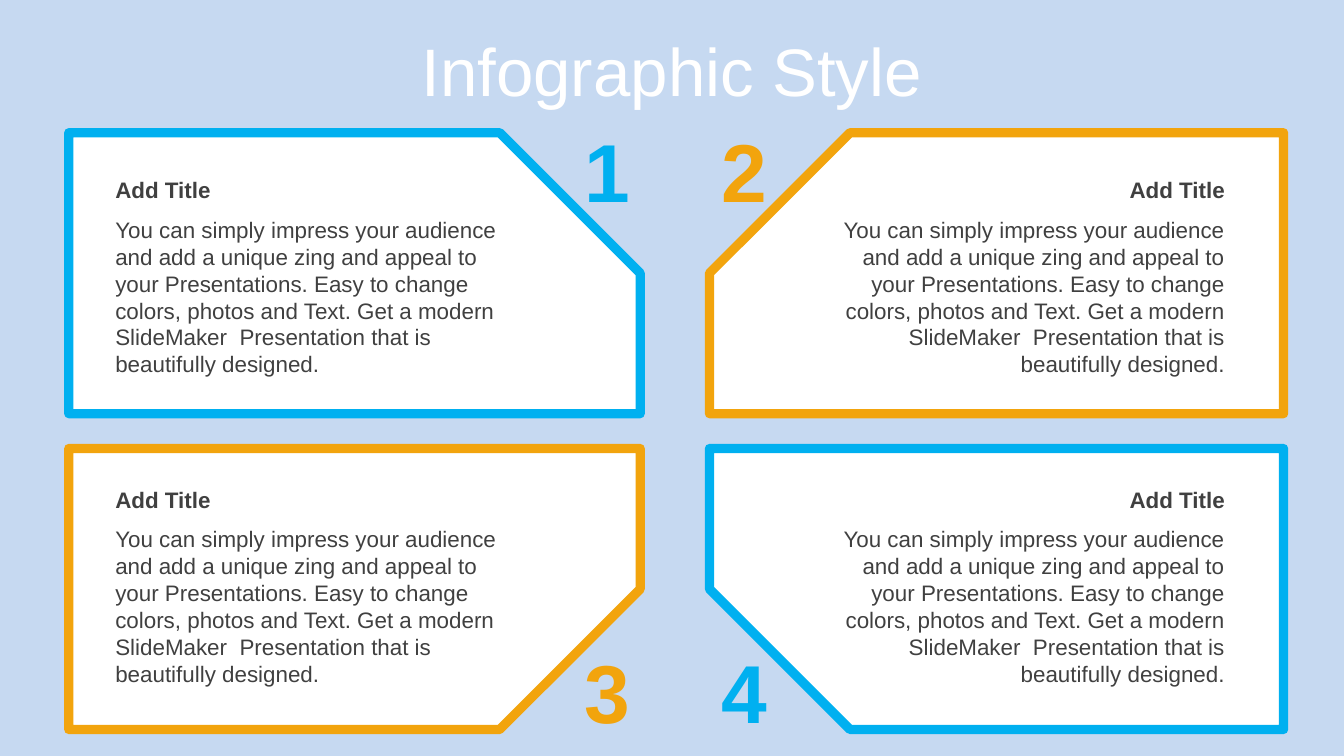
from pptx import Presentation
from pptx.dml.color import RGBColor
from pptx.enum.shapes import MSO_SHAPE as Shape
from pptx.enum.text import MSO_ANCHOR as Anchor, MSO_AUTO_SIZE as AutoSize, PP_ALIGN as Align
from pptx.util import Cm, Pt

BACKDROP, WHITE, BLUE, ORANGE, GREY = "C6D9F1", "FFFFFF", "00B0F0", "F2A40D", "404040"

BODY = ("You can simply impress your audience and add a unique zing and appeal to "
        "your Presentations. Easy to change colors, photos and Text. Get a modern "
        "SlideMaker  Presentation that is beautifully designed.")

# Columns and rows of the two-by-two grid, in centimetres
COLUMNS = [
    dict(card=1.3, width=10.8, number=10.11, text=1.93, align=Align.LEFT),
    dict(card=13.41, width=10.85, number=12.7, text=15.25, align=Align.RIGHT),
]
ROWS = [
    dict(card=2.51, number=2.15, heading=3.2, body=3.96),
    dict(card=8.48, number=11.99, heading=9.06, body=9.81),
]


def color(code):
    return RGBColor.from_string(code)


def add_text(shapes, text, box, size, code, align, bold=False,
             anchor=Anchor.TOP, auto_size=AutoSize.SHAPE_TO_FIT_TEXT):
    frame = shapes.add_textbox(*map(Cm, box)).text_frame
    frame_format = dict(word_wrap=True, auto_size=auto_size, vertical_anchor=anchor)
    for key, value in frame_format.items():
        setattr(frame, key, value)
    paragraph = frame.paragraphs[0]
    paragraph.alignment = align
    run = paragraph.add_run()
    run.text = text
    for key, value in dict(name="Arial", size=Pt(size), bold=bold).items():
        setattr(run.font, key, value)
    run.font.color.rgb = color(code)


def add_card(shapes, column, row, code, flips):
    card = shapes.add_shape(Shape.SNIP_1_RECTANGLE, Cm(column["card"]), Cm(row["card"]),
                            Cm(column["width"]), Cm(5.31))
    card.adjustments[0] = 0.5
    card.shadow.inherit = False
    card.fill.solid()
    card.fill.fore_color.rgb = color(WHITE)
    card.line.color.rgb = color(code)
    card.line.width = Pt(5)
    # Turn the cut corner towards the middle of the slide
    for flip in flips:
        card._element.spPr.xfrm.set(flip, "1")


def add_number(shapes, number, column, row, code):
    add_text(shapes, str(number), (column["number"], row["number"], 2.74, 2.13),
             44, code, Align.CENTER, bold=True, anchor=Anchor.MIDDLE)


def add_copy(shapes, column, row):
    group = shapes.add_group_shape().shapes
    left, align = column["text"], column["align"]
    add_text(group, BODY, (left, row["body"], 8.15, 3.33), 12, GREY, align)
    add_text(group, "Add Title", (left, row["heading"], 8.15, 0.76), 12, GREY, align, bold=True)


def main():
    deck = Presentation()
    deck.slide_width, deck.slide_height = Cm(25.4), Cm(14.29)
    slide = deck.slides.add_slide(deck.slide_layouts[6])
    slide.background.fill.solid()
    slide.background.fill.fore_color.rgb = color(BACKDROP)

    # Title
    add_text(slide.shapes, "Infographic Style", (0, 0.51, 25.4, 1.6), 36, WHITE,
             Align.CENTER, anchor=Anchor.MIDDLE, auto_size=AutoSize.NONE)

    # Four numbered cards, with the colours in a checkerboard
    for r, row in enumerate(ROWS):
        for c, column in enumerate(COLUMNS):
            code = BLUE if r == c else ORANGE
            flips = ["flipH"] * c + ["flipV"] * r
            add_card(slide.shapes, column, row, code, flips)
            add_number(slide.shapes, 2 * r + c + 1, column, row, code)
            add_copy(slide.shapes, column, row)

    deck.save("out.pptx")


if __name__ == "__main__":
    main()
